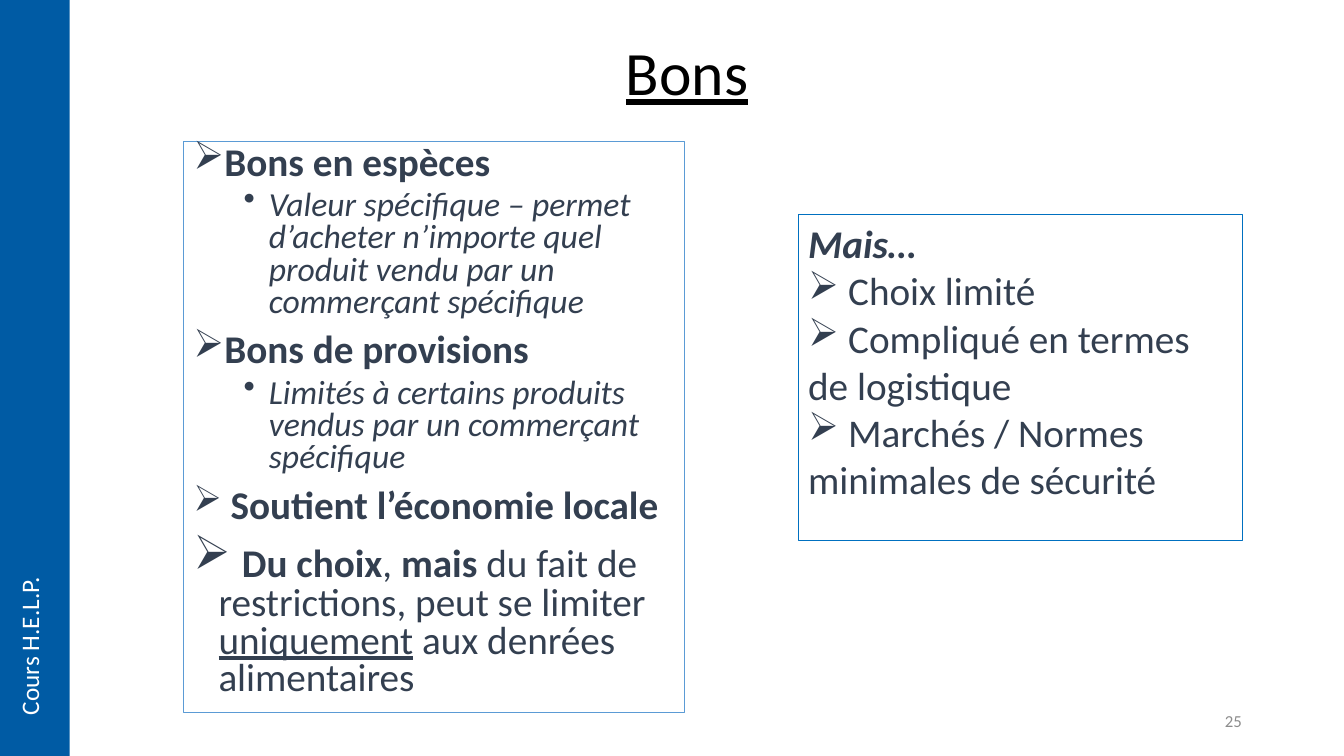
from dataclasses import dataclass
from typing import Optional

from pptx import Presentation
from pptx.dml.color import RGBColor
from pptx.enum.shapes import MSO_SHAPE as Preset
from pptx.enum.text import MSO_ANCHOR as Anchor, PP_ALIGN as Align
from pptx.oxml.ns import qn
from pptx.oxml.xmlchemy import OxmlElement
from pptx.util import Pt

FONT = "Calibri"
COLOURS = {
    "black": "000000", "white": "FFFFFF", "slate": "333F50", "band": "005BA4",
    "left_border": "5B9BD5", "right_border": "0070C0", "number": "8C8C8C",
}
ARROW, DOT = "➢", "•"


@dataclass
class Span:
    text: str
    size: float = 28
    bold: bool = False
    italic: bool = False
    underline: bool = False
    colour: str = "slate"


@dataclass
class Para:
    spans: list[Span]
    bullet: Optional[str] = None
    level: int = 0
    margin: float = 0
    hanging: float = 0
    line_spacing: float = 1
    before: float = 0
    align: Align = Align.LEFT


@dataclass
class Area:
    left: float
    top: float
    width: float
    height: float

    def lengths(self) -> list:
        return [Pt(v) for v in (self.left, self.top, self.width, self.height)]


def colour(name: str) -> RGBColor:
    return RGBColor.from_string(COLOURS[name])


def add_span(para, span: Span) -> None:
    run = para.add_run()
    run.text = span.text
    font = run.font
    font.name, font.size = FONT, Pt(span.size)
    font.bold, font.italic, font.underline = span.bold, span.italic, span.underline
    font.color.rgb = colour(span.colour)


def write(box, paras: list[Para], *, anchor: Anchor = Anchor.TOP,
          wrap: bool = True, vertical: Optional[str] = None) -> None:
    frame = box.text_frame
    frame.word_wrap, frame.vertical_anchor = wrap, anchor
    if vertical:
        box.element.find(".//" + qn("a:bodyPr")).set("vert", vertical)
    for index, item in enumerate(paras):
        para = frame.add_paragraph() if index else frame.paragraphs[0]
        if item.bullet:
            properties = para._p.get_or_add_pPr()
            properties.set("marL", str(Pt(item.margin)))
            properties.set("indent", str(-Pt(item.hanging)))
            mark = OxmlElement("a:buChar")
            mark.set("char", item.bullet)
            properties.append(mark)
        para.level, para.alignment = item.level, item.align
        para.line_spacing = item.line_spacing
        para.space_before = Pt(item.before if index else 0)
        for span in item.spans:
            add_span(para, span)


def add_rectangle(page, area: Area, fill: Optional[str] = None,
                  border: Optional[str] = None):
    box = page.shapes.add_shape(Preset.RECTANGLE, *area.lengths())
    box.shadow.inherit = False
    if fill:
        box.fill.solid()
        box.fill.fore_color.rgb = colour(fill)
    else:
        box.fill.background()
    if border:
        box.line.color.rgb = colour(border)
        box.line.width = Pt(0.75)
    else:
        box.line.fill.background()
    return box


def add_text(page, area: Area, text: str, *, size: float, shade: str,
             underline: bool = False, align: Align = Align.LEFT,
             line_spacing: float = 1, **frame_format) -> None:
    span = Span(text, size, underline=underline, colour=shade)
    write(page.shapes.add_textbox(*area.lengths()),
          [Para([span], align=align, line_spacing=line_spacing)], **frame_format)


def topic(*spans: Span) -> Para:
    return Para(list(spans), ARROW, margin=18, hanging=18, line_spacing=0.8, before=10)


def detail(text: str) -> Para:
    return Para([Span(text, 24, italic=True)], DOT, level=1, margin=54,
                hanging=18, line_spacing=0.8, before=5)


def limit(text: str) -> Para:
    return Para([Span(text)], ARROW)


VOUCHERS = [
    topic(Span("Bons en espèces", bold=True)),
    detail("Valeur spécifique – permet d’acheter n’importe quel produit vendu "
           "par un commerçant spécifique"),
    topic(Span("Bons de provisions", bold=True)),
    detail("Limités à certains produits vendus par un commerçant spécifique"),
    topic(Span(" ", 26), Span("Soutient l’économie locale", bold=True)),
    topic(Span(" ", 34), Span("Du choix", bold=True), Span(", "),
          Span("mais", bold=True),
          Span(" du fait de restrictions, peut se limiter "),
          Span("uniquement", underline=True), Span(" aux denrées alimentaires")),
]
DRAWBACKS = [
    Para([Span("Mais…", bold=True, italic=True)]),
    limit(" Choix limité"),
    limit(" Compliqué en termes de logistique"),
    limit(" Marchés / Normes minimales de sécurité"),
]


def main() -> None:
    deck = Presentation()
    deck.slide_width, deck.slide_height = Pt(960), Pt(540)
    page = deck.slides.add_slide(deck.slide_layouts[6])

    # Title
    add_text(page, Area(440, 11.5, 358, 85), "Bons", size=44, shade="black",
             underline=True, line_spacing=0.9, anchor=Anchor.MIDDLE)

    # Kinds of voucher
    write(add_rectangle(page, Area(131, 100.8, 358, 408.2), border="left_border"),
          VOUCHERS)

    # Side band with course name
    add_rectangle(page, Area(0, 0, 49.7, 540), fill="band")
    add_text(page, Area(6.5, 404, 36, 113.8), "Cours H.E.L.P.", size=18,
             shade="white", wrap=False, vertical="vert270")

    # Page number
    add_text(page, Area(678.2, 500.4, 216, 28.8), "25", size=12, shade="number",
             align=Align.RIGHT, anchor=Anchor.MIDDLE)

    # Drawbacks
    write(add_rectangle(page, Area(570.2, 153.4, 317.5, 232.6), border="right_border"),
          DRAWBACKS)

    deck.save("out.pptx")


if __name__ == "__main__":
    main()
